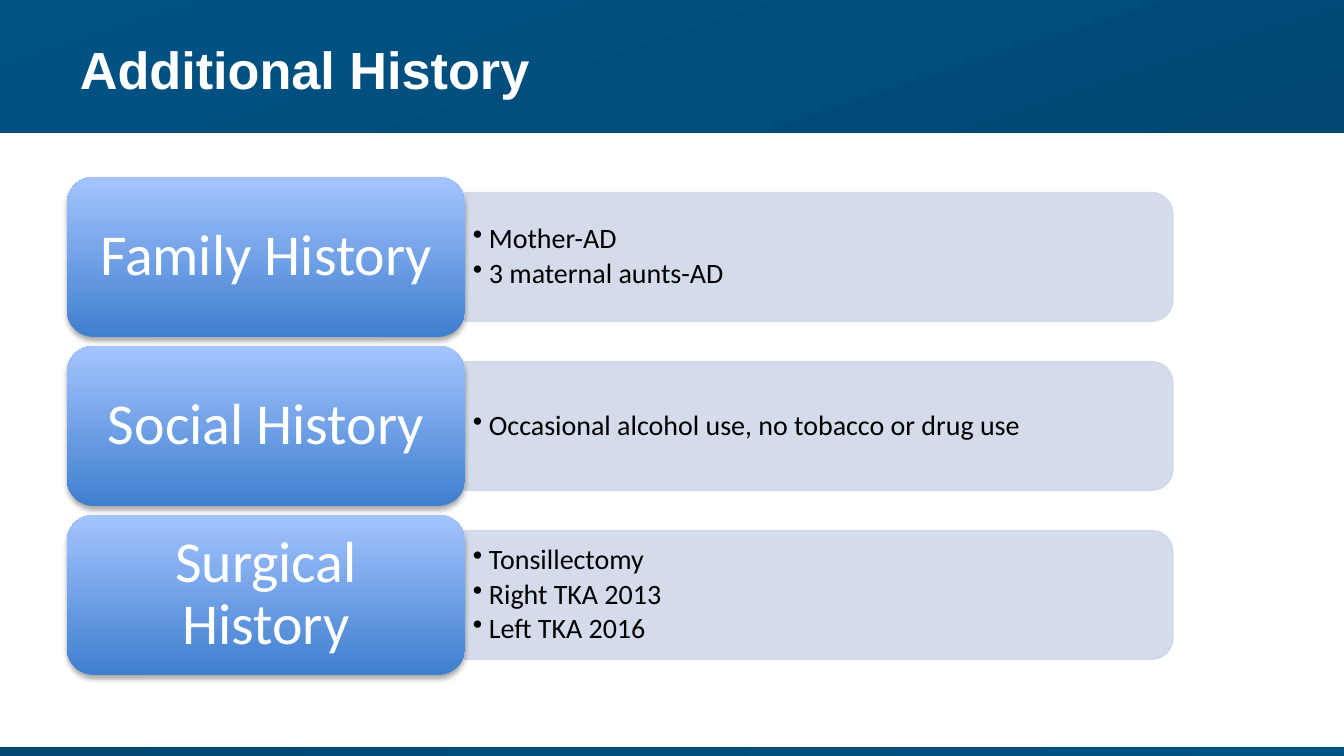
from lxml import etree
from pptx import Presentation
from pptx.dml.color import RGBColor
from pptx.enum.shapes import MSO_SHAPE
from pptx.enum.text import MSO_ANCHOR, PP_ALIGN
from pptx.oxml.ns import qn
from pptx.util import Emu, Pt

RECTANGLE = MSO_SHAPE.RECTANGLE
ROUNDED = MSO_SHAPE.ROUNDED_RECTANGLE
ROUNDED_TOP = MSO_SHAPE.ROUND_2_SAME_RECTANGLE
MIDDLE = MSO_ANCHOR.MIDDLE
LEFT, CENTER = PP_ALIGN.LEFT, PP_ALIGN.CENTER

PAGE_WIDTH, PAGE_HEIGHT = 1344, 756
SCALE = 9144000 / PAGE_WIDTH

COLORS = {
    "navy": "004773", "blue": "005385",
    "card_dark": "3F7FCE", "card_light": "A4C4FF",
    "panel": "D0D8E8", "white": "FFFFFF", "black": "000000",
}

HISTORY = [
    ("Family History", ["Mother-AD", "3 maternal aunts-AD"]),
    ("Social History", ["Occasional alcohol use, no tobacco or drug use"]),
    ("Surgical History", ["Tonsillectomy", "Right TKA 2013", "Left TKA 2016"]),
]


def px(value):
    return Emu(round(value * SCALE))


def color(name):
    return RGBColor.from_string(COLORS[name])


def add_child(parent, tag, **attributes):
    child = etree.SubElement(parent, qn(tag))
    for name, value in attributes.items():
        child.set(name, str(value))
    return child


def write(frame, lines, font="Calibri", size=15, fill="black", bold=False,
          align=LEFT, spacing=0.9, after=0, bullet=None, indent=0, inset=(0, 0)):
    """Fill a text frame with one paragraph per line."""
    frame.word_wrap = True
    frame.vertical_anchor = MIDDLE
    frame.margin_left = frame.margin_right = px(inset[0])
    frame.margin_top = frame.margin_bottom = px(inset[1])
    for index, line in enumerate(lines):
        para = frame.add_paragraph() if index else frame.paragraphs[0]
        para.alignment = align
        para.line_spacing = spacing
        para.space_after = Pt(after)
        if bullet:
            properties = para._p.get_or_add_pPr()
            properties.set("marL", str(px(indent)))
            properties.set("indent", str(-px(indent)))
            add_child(properties, "a:buChar", char=bullet)
        span = para.add_run()
        span.text = line
        span.font.name = font
        span.font.size = Pt(size)
        span.font.bold = bold
        span.font.color.rgb = color(fill)


class Page:
    def __init__(self, deck):
        self.slide = deck.slides.add_slide(deck.slide_layouts[6])

    def shape(self, kind, left, top, width, height):
        box = self.slide.shapes.add_shape(
            kind, px(left), px(top), px(width), px(height))
        box.shadow.inherit = False
        box.line.fill.background()
        return box

    def gradient(self, kind, bounds, colors, angle):
        box = self.shape(kind, *bounds)
        box.fill.gradient()
        box.fill.gradient_angle = angle
        for stop, name in zip(box.fill.gradient_stops, colors):
            stop.color.rgb = color(name)
        return box

    def text(self, left, top, width, height, lines, **style):
        box = self.slide.shapes.add_textbox(
            px(left), px(top), px(width), px(height))
        write(box.text_frame, lines, **style)

    def card(self, left, top, width, height, label):
        box = self.gradient(ROUNDED, (left, top, width, height),
                            ("card_dark", "card_light"), 90)
        effects = box._element.spPr.find(qn("a:effectLst"))
        shadow = add_child(effects, "a:outerShdw", blurRad=Pt(3.1),
                           dist=Pt(1.8), dir=5400000, rotWithShape=0)
        tint = add_child(shadow, "a:srgbClr", val=COLORS["black"])
        add_child(tint, "a:alpha", val=35000)
        write(box.text_frame, [label], size=31, fill="white",
              align=CENTER, inset=(17, 8))

    def panel(self, left, top, width, height):
        """Panel with rounded right corners: a round-topped shape turned by 90°."""
        shift = (width - height) / 2
        box = self.shape(ROUNDED_TOP, left + shift, top - shift, height, width)
        box.rotation = 90
        box.fill.solid()
        box.fill.fore_color.rgb = color("panel")
        box.line.color.rgb = color("panel")
        box.line.width = Pt(0.75)
        for tint in box._element.spPr.iter(qn("a:srgbClr")):
            add_child(tint, "a:alpha", val=90000)


def main():
    deck = Presentation()
    deck.slide_width, deck.slide_height = px(PAGE_WIDTH), px(PAGE_HEIGHT)
    page = Page(deck)

    # Header and footer bands
    page.gradient(RECTANGLE, (0, 0, PAGE_WIDTH, 133), ("navy", "blue"), 108)
    page.gradient(RECTANGLE, (0, 747, PAGE_WIDTH, 9), ("navy", "blue"), 0)
    page.text(67, 2, 1210, 133, ["Additional History"], font="Arial", size=28,
              fill="white", bold=True, spacing=1.0, inset=(13, 7))

    # History rows: panel, bullets, card
    left, top, card_width, card_height, pitch = 67, 177, 398, 160, 169
    panel_left, panel_width, panel_height = left + card_width, 708, 129
    for row, (label, items) in enumerate(HISTORY):
        card_top = top + row * pitch
        panel_top = card_top + (card_height - panel_height) / 2
        page.panel(panel_left, panel_top, panel_width, panel_height)
        page.text(panel_left, panel_top + 6, panel_width - 6, panel_height - 12,
                  items, bullet="•", indent=16, after=2.25, inset=(8, 4))
        page.card(left, card_top, card_width, card_height, label)

    deck.save("out.pptx")


if __name__ == "__main__":
    main()
